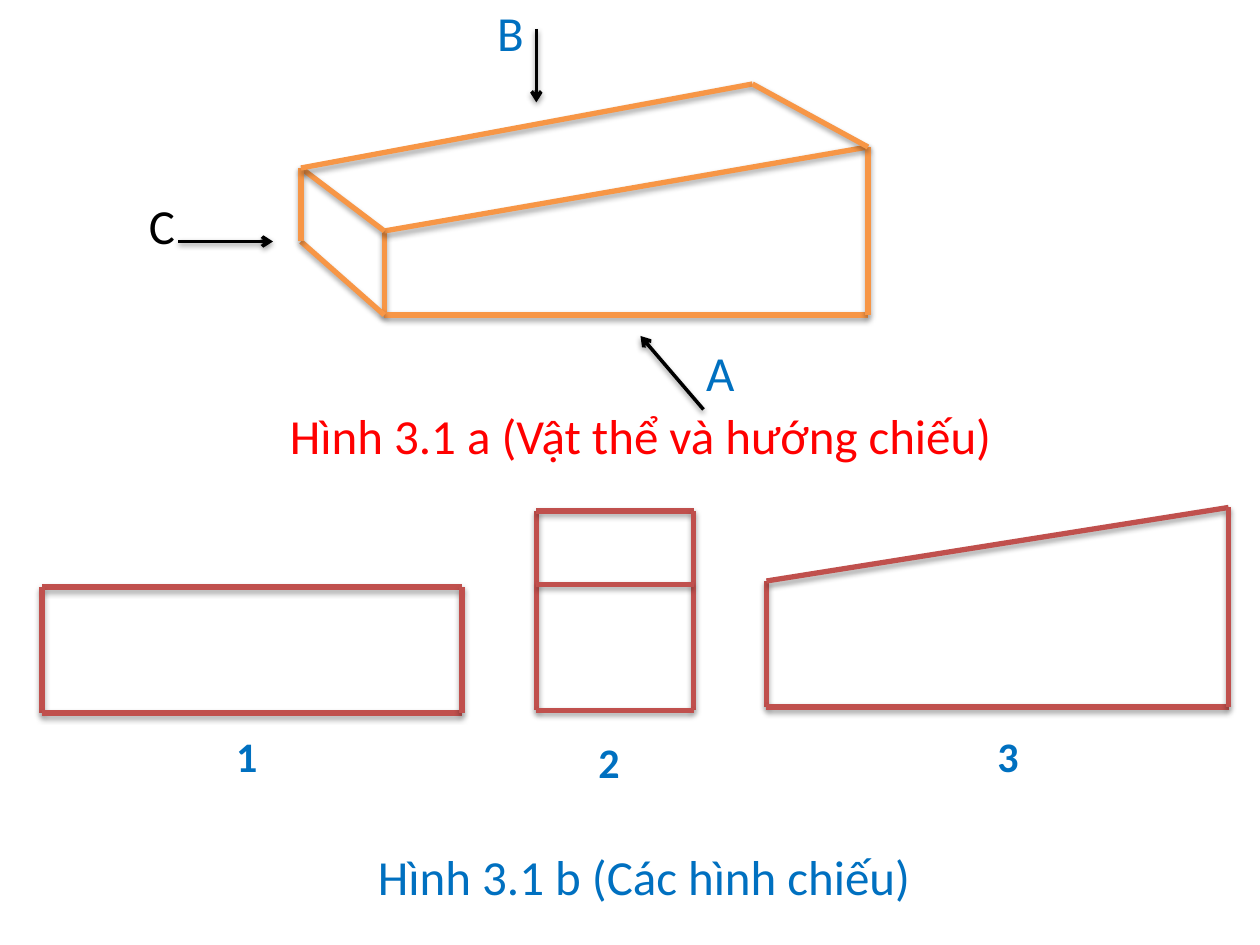
import pptx
import pptx.util
import pptx.dml.color
import pptx.enum.shapes
import pptx.enum.text
import pptx.oxml
import pptx.oxml.ns

Pt = pptx.util.Pt
COLORS = {
    "solid": "F79646",
    "view": "C0504D",
    "arrow": "000000",
    "red": "FF0000",
    "blue": "0070C0",
    "black": "000000",
}


def rgb(name):
    return pptx.dml.color.RGBColor.from_string(COLORS[name])


def add_shade(line, dist, alpha):
    """Give a line a soft shadow that falls straight down."""
    line._element.spPr.append(pptx.oxml.parse_xml(
        f'<a:effectLst {pptx.oxml.ns.nsdecls("a")}>'
        f'<a:outerShdw blurRad="{Pt(3.15)}" dist="{Pt(dist)}" dir="5400000" rotWithShape="0">'
        f'<a:srgbClr val="000000"><a:alpha val="{alpha * 1000}"/></a:srgbClr>'
        '</a:outerShdw></a:effectLst>'))


def add_line(shapes, start, end, color, width, dist=1.8, alpha=35):
    kind = pptx.enum.shapes.MSO_CONNECTOR.STRAIGHT
    line = shapes.add_connector(kind, *(Pt(v) for v in start + end))
    line.line.color.rgb = rgb(color)
    line.line.width = Pt(width)
    add_shade(line, dist, alpha)
    return line


def add_arrow(slide, start, end):
    line = add_line(slide.shapes, start, end, "arrow", 2, 1.6, 38)
    line.line._get_or_add_ln().append(pptx.oxml.parse_xml(
        f'<a:tailEnd {pptx.oxml.ns.nsdecls("a")} type="arrow"/>'))


def add_group(slide, color, points, edges):
    """Draw the edges, each a pair of point names, as one group."""
    group = slide.shapes.add_group_shape()
    for start, end in edges.split():
        add_line(group.shapes, points[start], points[end], color, 3)


def add_text(slide, text, box, color, size=28, bold=False, center=True):
    shape = slide.shapes.add_textbox(*(Pt(v) for v in box))
    frame = shape.text_frame
    frame.word_wrap = True
    frame.auto_size = pptx.enum.text.MSO_AUTO_SIZE.SHAPE_TO_FIT_TEXT
    para = frame.paragraphs[0]
    align = pptx.enum.text.PP_ALIGN
    para.alignment = align.CENTER if center else align.LEFT
    run = para.add_run()
    run.text = text
    run.font.name = "Calibri"
    run.font.size = Pt(size)
    run.font.bold = bold
    run.font.color.rgb = rgb(color)


def main():
    deck = pptx.Presentation()
    deck.slide_width, deck.slide_height = Pt(720), Pt(540)
    slide = deck.slides.add_slide(deck.slide_layouts[6])

    # Solid: a-d front face, e-g back corners
    solid = {
        "a": (219.6, 132), "b": (219.6, 180), "c": (496, 180), "d": (496, 84),
        "e": (172, 96), "f": (172, 138), "g": (430, 48),
    }
    add_group(slide, "solid", solid, "ab ad bc cd bf ae ef eg gd")

    # Three views: a-d clockwise from top left, e-f inner edge
    top = {"a": (24, 335.5), "b": (264, 335.5), "c": (264, 407.5), "d": (24, 407.5)}
    front = {"a": (438, 332), "b": (702, 290), "c": (702, 404), "d": (438, 404)}
    side = {
        "a": (306.5, 292), "b": (396.5, 292), "c": (396.5, 406), "d": (306.5, 406),
        "e": (306.5, 334), "f": (396.5, 334),
    }
    add_group(slide, "view", top, "ab ad dc bc")
    add_group(slide, "view", front, "ad ab dc bc")
    add_group(slide, "view", side, "ad ab bc dc ef")

    # Captions and view numbers
    add_text(slide, "Hình 3.1 a (Vật thể và hướng chiếu)", (156, 228, 420, 41), "red")
    for text, left, y, width in (("1", 102, 414, 78), ("2", 318, 417.6, 60),
                                 ("3", 546, 414, 60)):
        add_text(slide, text, (left, y, width, 36), "blue", 24, True)
    add_text(slide, "Hình 3.1 b (Các hình chiếu)", (167, 480, 402, 41), "blue")

    # Viewing directions
    for start, end in (((306.5, 16.5), (306.5, 58.5)),
                       ((102, 138), (156, 138)),
                       ((402, 234), (366, 192))):
        add_arrow(slide, start, end)
    for text, left, y, width, color in (("A", 396.5, 192, 66, "blue"),
                                        ("B", 277, -2, 49, "blue"),
                                        ("C", 78, 108, 48, "black")):
        add_text(slide, text, (left, y, width, 41), color, center=False)

    deck.save("out.pptx")


if __name__ == "__main__":
    main()
